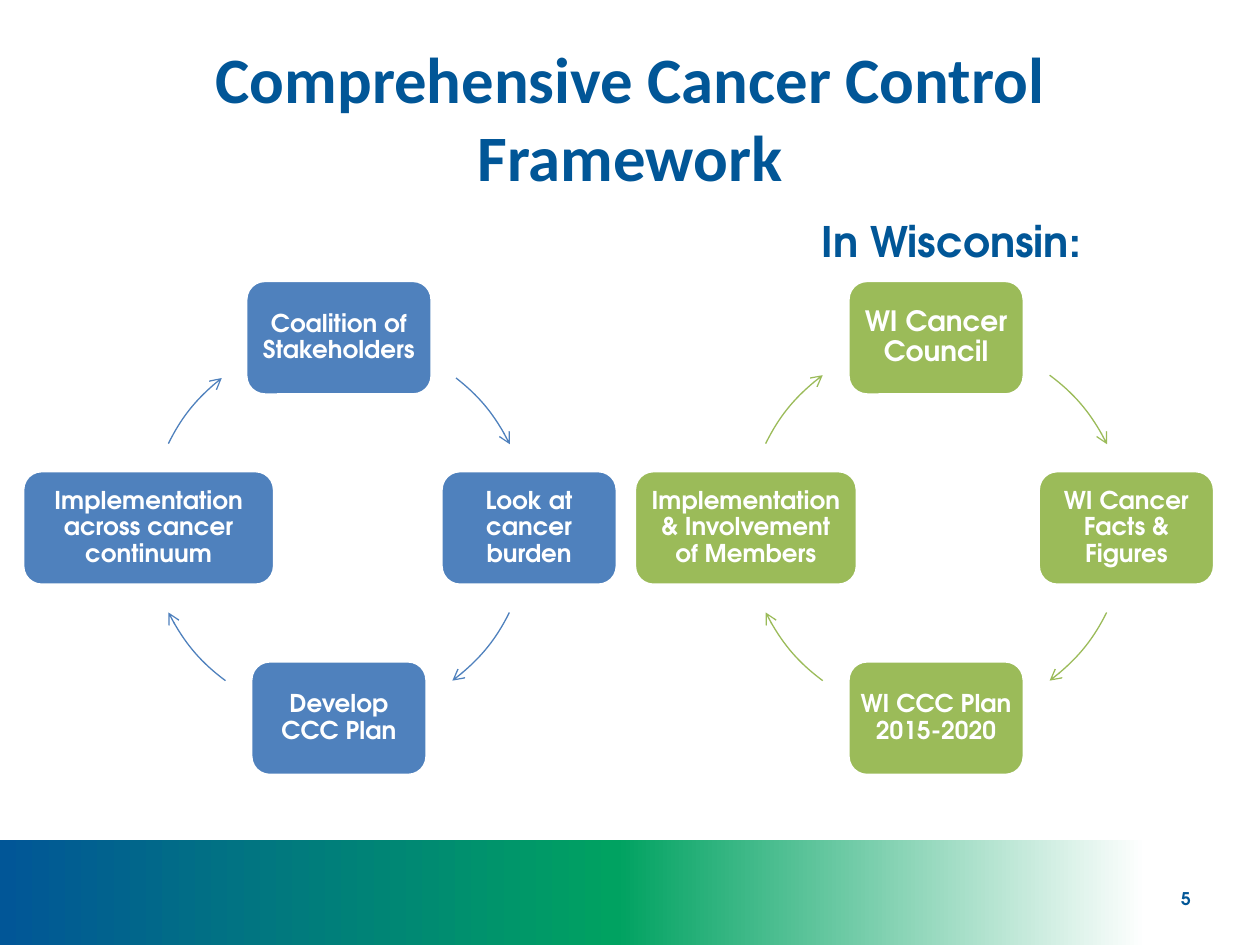
"""Build the Comprehensive Cancer Control framework slide with two four-step cycles."""
from copy import deepcopy
from math import cos, radians, sin, tan

from lxml import etree
from pptx import Presentation
from pptx.dml.color import RGBColor
from pptx.enum.shapes import MSO_SHAPE
from pptx.enum.text import MSO_ANCHOR as ANCHOR, MSO_AUTO_SIZE as AUTO, PP_ALIGN as ALIGN
from pptx.oxml.ns import qn
from pptx.util import Inches, Pt

COLORS = {"navy": "015697", "leaf": "00A261", "white": "FFFFFF",
          "blue": "4F81BD", "green": "9BBB59"}
HEAD, BODY = "Calibri", "TeX Gyre Adventor"
RADIUS, CENTER_Y, BOX_H = 1.51, 4.19, 0.91


def rgb(name):
    return RGBColor.from_string(COLORS[name])


def write(sp, text, size, font, color, align, anchor, inset=None):
    tf = sp.text_frame
    frame = {"word_wrap": True, "auto_size": AUTO.NONE, "vertical_anchor": anchor}
    if inset is not None:
        frame.update({f"margin_{side}": Inches(inset) for side in ("left", "top", "right", "bottom")})
    for key, value in frame.items():
        setattr(tf, key, value)
    p = tf.paragraphs[0]
    p.alignment = align
    r = p.add_run()
    r.text = text
    for key, value in {"name": font, "size": Pt(size), "bold": True}.items():
        setattr(r.font, key, value)
    r.font.color.rgb = rgb(color)
    return p


prs = Presentation()
prs.slide_width, prs.slide_height = Inches(10), Inches(7.5)
s = prs.slides.add_slide(prs.slide_layouts[5])

band = s.shapes.add_shape(MSO_SHAPE.RECTANGLE, 0, Inches(6.67), Inches(10), Inches(0.83))
band.shadow.inherit = False
band.line.fill.background()
band.fill.gradient()
band.fill.gradient_angle = 0
stop_list = band._element.spPr.find(".//" + qn("a:gsLst"))
stop_list.append(deepcopy(stop_list[0]))
stops = [(0, "navy"), (0.49, "leaf"), (0.91, "white")]
for stop, (position, color) in zip(band.fill.gradient_stops, stops):
    stop.position = position
    stop.color.rgb = rgb(color)

title = s.shapes.title
title.left, title.top, title.width, title.height = map(Inches, (0.5, 0.3, 9, 1.25))
write(title, "Comprehensive Cancer Control Framework", 37, HEAD, "navy", ALIGN.CENTER, ANCHOR.MIDDLE)

cycles = [
    ("blue", 2.69, 52, [("Coalition of Stakeholders", 1.48, 14), ("Look at cancer burden", 1.4, 14),
                        ("Develop CCC Plan", 1.4, 14),
                        ("Implementation across cancer continuum", 2, 14)]),
    ("green", 7.43, 53.4, [("WI Cancer Council", 1.4, 16), ("WI Cancer Facts & Figures", 1.4, 14),
                           ("WI CCC Plan 2015-2020", 1.4, 14),
                           ("Implementation & Involvement of Members", 1.77, 14)]),
]
for color, center_x, top_angle, steps in cycles:
    for i, (text, width, size) in enumerate(steps):
        angle = radians(90 * i - 90)
        x, y = center_x + RADIUS * cos(angle), CENTER_Y + RADIUS * sin(angle)
        box = s.shapes.add_shape(MSO_SHAPE.ROUNDED_RECTANGLE, Inches(x - width / 2),
                                 Inches(y - BOX_H / 2), Inches(width), Inches(BOX_H))
        box.shadow.inherit = False
        box.fill.solid()
        box.fill.fore_color.rgb = rgb(color)
        box.line.color.rgb = rgb("white")
        box.line.width = Pt(2)
        p = write(box, text, size, BODY, "white", ALIGN.CENTER, ANCHOR.MIDDLE,
                  0.06 if width > 1.4 else 0.05)
        p.line_spacing = 0.9

    for start, end in [(-top_angle, -26.1), (26.4, 53.4), (126.6, 153.6), (206.3, 180 + top_angle)]:
        a, b = radians(start), radians(end)
        k = 4 / 3 * tan((b - a) / 4)
        curve = [(cos(a), sin(a)), (cos(a) - k * sin(a), sin(a) + k * cos(a)),
                 (cos(b) + k * sin(b), sin(b) - k * cos(b)), (cos(b), sin(b))]
        builder = s.shapes.build_freeform(Inches(center_x - RADIUS), Inches(CENTER_Y - RADIUS))
        builder.add_line_segments([(Inches(center_x + RADIUS), Inches(CENTER_Y + RADIUS))], close=False)
        arc = builder.convert_to_shape()
        outline = arc._element.spPr.find(".//" + qn("a:path"))
        for segment in list(outline):
            outline.remove(segment)
        for tag, points in (("a:moveTo", curve[:1]), ("a:cubicBezTo", curve[1:])):
            segment = etree.SubElement(outline, qn(tag))
            for x, y in points:
                etree.SubElement(segment, qn("a:pt"), x=str(Inches(RADIUS * (1 + x))),
                                 y=str(Inches(RADIUS * (1 + y))))
        arc.shadow.inherit = False
        arc.fill.background()
        arc.line.color.rgb = rgb(color)
        arc.line.width = Pt(0.75)
        etree.SubElement(arc.line._get_or_add_ln(), qn("a:tailEnd"), type="arrow")

heading = s.shapes.add_textbox(Inches(6.42), Inches(1.46), Inches(2.42), Inches(0.7))
write(heading, "In Wisconsin:", 24, BODY, "navy", ALIGN.LEFT, ANCHOR.BOTTOM)

number = s.shapes.add_textbox(Inches(6.83), Inches(6.93), Inches(2.72), Inches(0.4))
write(number, "5", 10, BODY, "navy", ALIGN.RIGHT, ANCHOR.MIDDLE)

prs.save("out.pptx")
